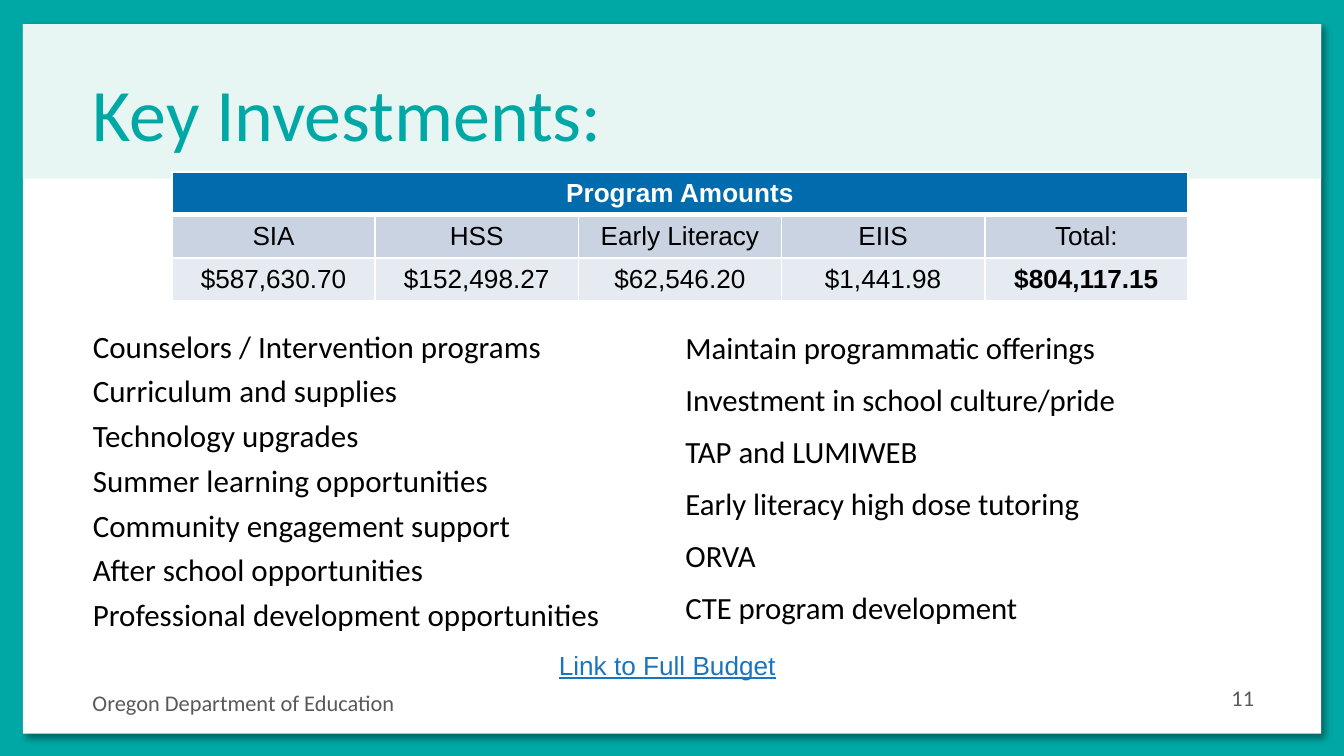
"""Build the Key Investments slide with its program amounts table and two lists."""
from dataclasses import dataclass

from lxml import etree
from pptx import Presentation
from pptx.dml.color import RGBColor
from pptx.enum.shapes import MSO_SHAPE
from pptx.enum.text import MSO_ANCHOR, MSO_AUTO_SIZE, PP_ALIGN
from pptx.oxml import parse_xml
from pptx.oxml.ns import nsdecls, qn
from pptx.util import Inches, Pt

TITLE = "Key Investments:"
TABLE_HEADING = "Program Amounts"
AMOUNTS = [
    ("SIA", "$587,630.70"),
    ("HSS", "$152,498.27"),
    ("Early Literacy", "$62,546.20"),
    ("EIIS", "$1,441.98"),
    ("Total:", "$804,117.15"),
]
SUPPORTS = [
    "Counselors / Intervention programs",
    "Curriculum and supplies",
    "Technology upgrades",
    "Summer learning opportunities",
    "Community engagement support",
    "After school opportunities",
    "Professional development opportunities",
]
PROGRAMS = [
    "Maintain programmatic offerings",
    "Investment in school culture/pride",
    "TAP and LUMIWEB",
    "Early literacy high dose tutoring",
    "ORVA",
    "CTE program development",
]
BUDGET_LINK = "Link to Full Budget"
FOOTER = "Oregon Department of Education"
PAGE_NUMBER = "11"


@dataclass(frozen=True)
class Theme:
    teal: str = "00A8A5"
    mint: str = "E7F5F3"
    white: str = "FFFFFF"
    black: str = "000000"
    gray: str = "595959"
    link: str = "1B75BC"
    heading_fill: str = "006CAD"
    label_fill: str = "CAD3E2"
    amount_fill: str = "E6EAF1"
    text_font: str = "Calibri"
    table_font: str = "Arial"
    title_size: float = 39.6
    supports_size: float = 16.65
    programs_size: float = 16.5
    table_size: float = 14
    small_size: float = 12


THEME = Theme()


def rgb(color):
    return RGBColor.from_string(color)


def style(paragraph, size, color, font=THEME.text_font, align=PP_ALIGN.LEFT, bold=False):
    paragraph.alignment = align
    paragraph.font.name = font
    paragraph.font.size = Pt(size)
    paragraph.font.bold = bold
    paragraph.font.color.rgb = rgb(color)


def place(shape, left, top, width, height):
    shape.left, shape.top = Inches(left), Inches(top)
    shape.width, shape.height = Inches(width), Inches(height)


def add_panel(slide, depth, color, height):
    panel = slide.shapes.add_shape(
        MSO_SHAPE.RECTANGLE, Inches(0.17), Inches(0.18), Inches(9.66), Inches(height))
    panel.fill.solid()
    panel.fill.fore_color.rgb = rgb(color)
    panel.line.fill.background()
    panel.shadow.inherit = False
    panel.element.getparent().insert(2 + depth, panel.element)
    return panel


def add_shadow(panel):
    panel.element.spPr.find(qn("a:effectLst")).append(parse_xml(
        f'<a:outerShdw {nsdecls("a")} blurRad="{Pt(4)}" dist="{Pt(3)}" dir="2700000" '
        f'algn="tl" rotWithShape="0"><a:srgbClr val="{THEME.black}">'
        '<a:alpha val="40000"/></a:srgbClr></a:outerShdw>'))


def fill_list(placeholder, items, size, line_spacing, inset):
    frame = placeholder.text_frame
    frame.auto_size = MSO_AUTO_SIZE.NONE
    frame.word_wrap = True
    frame.vertical_anchor = MSO_ANCHOR.TOP
    frame.margin_top = frame.margin_bottom = Inches(inset)
    frame.text = "\n".join(items)
    for index, paragraph in enumerate(frame.paragraphs):
        properties = paragraph._p.get_or_add_pPr()
        properties.set("marL", "0")
        properties.set("indent", "0")
        etree.SubElement(properties, qn("a:buNone"))
        paragraph.line_spacing = line_spacing
        paragraph.space_before = Pt(10 if index else 0)
        style(paragraph, size, THEME.black)


def add_label(slide, text, box, size, color, font=THEME.text_font, align=PP_ALIGN.LEFT):
    label = slide.shapes.add_textbox(*map(Inches, box))
    label.text_frame.word_wrap = True
    label.text_frame.text = text
    paragraph = label.text_frame.paragraphs[0]
    style(paragraph, size, color, font, align)
    return paragraph


def set_borders(cell, top, bottom):
    properties = cell._tc.get_or_add_tcPr()
    for side, width in (("L", 1), ("R", 1), ("T", top), ("B", bottom)):
        properties.append(parse_xml(
            f'<a:ln{side} {nsdecls("a")} w="{Pt(width)}"><a:solidFill>'
            f'<a:srgbClr val="{THEME.white}"/></a:solidFill></a:ln{side}>'))


def add_amounts_table(slide):
    count = len(AMOUNTS)
    labels, amounts = zip(*AMOUNTS)
    rows = [
        ((TABLE_HEADING,) + ("",) * (count - 1), THEME.heading_fill, THEME.white, 1, 3),
        (labels, THEME.label_fill, THEME.black, 3, 1),
        (amounts, THEME.amount_fill, THEME.black, 1, 1),
    ]
    table = slide.shapes.add_table(
        len(rows), count, Inches(1.28), Inches(1.28),
        Inches(7.56), Inches(0.31 * len(rows))).table
    for row, (texts, fill, color, top, bottom) in enumerate(rows):
        for column, text in enumerate(texts):
            cell = table.cell(row, column)
            set_borders(cell, top, bottom)
            cell.fill.solid()
            cell.fill.fore_color.rgb = rgb(fill)
            cell.vertical_anchor = MSO_ANCHOR.TOP if row else MSO_ANCHOR.MIDDLE
            cell.text = text
            is_total = row == len(rows) - 1 and column == count - 1
            style(cell.text_frame.paragraphs[0], THEME.table_size, color,
                  THEME.table_font, PP_ALIGN.CENTER, bold=row == 0 or is_total)
    table.cell(0, 0).merge(table.cell(0, count - 1))


def main():
    deck = Presentation()
    deck.slide_width = Inches(10)
    deck.slide_height = deck.slide_width * 9 // 16
    slide = deck.slides.add_slide(deck.slide_layouts[3])
    slide.background.fill.solid()
    slide.background.fill.fore_color.rgb = rgb(THEME.teal)

    add_shadow(add_panel(slide, 0, THEME.white, 5.28))
    add_panel(slide, 1, THEME.mint, 1.15)

    title = slide.shapes.title
    place(title, 0.59, 0.38, 8.85, 0.84)
    title.text_frame.text = TITLE
    title.text_frame.auto_size = MSO_AUTO_SIZE.NONE
    title.text_frame.vertical_anchor = MSO_ANCHOR.BOTTOM
    title.text_frame.paragraphs[0].line_spacing = 0.9
    style(title.text_frame.paragraphs[0], THEME.title_size, THEME.teal)

    supports, programs = slide.placeholders[1], slide.placeholders[2]
    place(supports, 0.59, 2.46, 4.22, 2.4)
    fill_list(supports, SUPPORTS, THEME.supports_size, 0.7, 0.05)
    place(programs, 5, 2.38, 3.85, 2.4)
    fill_list(programs, PROGRAMS, THEME.programs_size, 0.9, 0.1)

    add_amounts_table(slide)
    add_label(slide, FOOTER, (0.59, 5.08, 6.27, 0.3), THEME.small_size, THEME.gray)
    add_label(slide, PAGE_NUMBER, (7.06, 5.04, 2.37, 0.3), THEME.small_size,
              THEME.gray, align=PP_ALIGN.RIGHT)
    budget_link = add_label(slide, BUDGET_LINK, (4.06, 4.78, 1.87, 0.34),
                            THEME.table_size, THEME.link, THEME.table_font)
    budget_link.font.underline = True

    deck.save("out.pptx")


if __name__ == "__main__":
    main()
